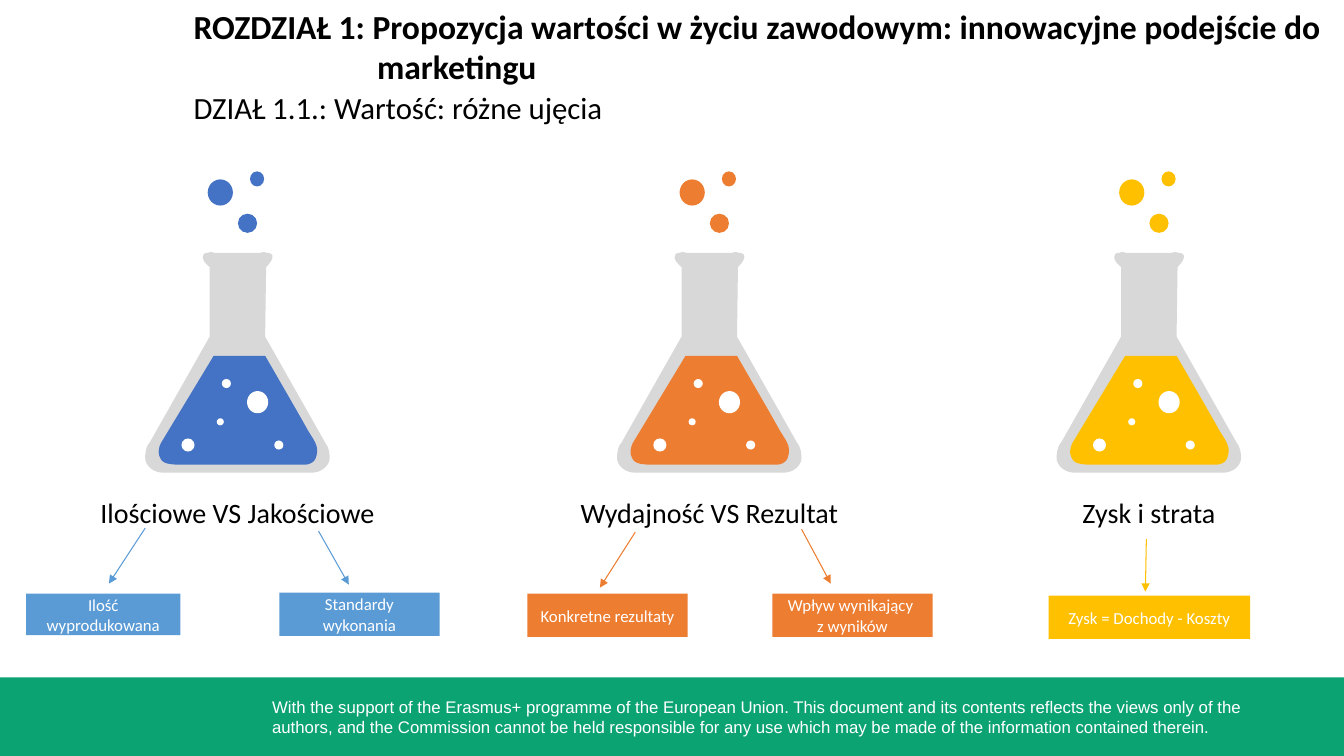
from pptx import Presentation
from pptx.dml.color import RGBColor
from pptx.enum.shapes import MSO_CONNECTOR as Connector, MSO_SHAPE as Shape
from pptx.enum.text import MSO_ANCHOR as Anchor, PP_ALIGN as Align
from pptx.oxml.ns import qn
from pptx.util import Cm, Pt
from lxml.etree import SubElement

COLORS = {
    "green": "0CA373", "glass": "D8D8D8", "white": "FFFFFF", "black": "000000",
    "blue": "4472C4", "sky": "5B9BD5", "orange": "ED7D31", "gold": "FFC000",
}

CHAPTER = [
    ("ROZDZIAŁ 1: Propozycja wartości w życiu zawodowym: innowacyjne podejście do", 0),
    ("marketingu", 1.82),
]
SECTION = "DZIAŁ 1.1.: Wartość: różne ujęcia"
SUPPORT = (
    "With the support of the Erasmus+ programme of the European Union. "
    "This document and its contents reflects the views only of the authors, "
    "and the Commission cannot be held responsible for any use which may be "
    "made of the information contained therein."
)

FLASKS = [
    {"left": 1.44, "liquid": "blue", "accent": "sky", "label": "Ilościowe VS Jakościowe",
     "notes": [("Ilość wyprodukowana", (0.26, 5.89, 1.53, 0.41)),
               ("Standardy wykonania", (2.77, 5.88, 1.59, 0.43))],
     "arrows": [(1.44, 5.24, 1.08, 5.79), (3.16, 5.27, 3.46, 5.8)]},
    {"left": 6.12, "liquid": "orange", "accent": "orange", "label": "Wydajność VS Rezultat",
     "notes": [("Konkretne rezultaty", (5.23, 5.89, 1.59, 0.43)),
               ("Wpływ wynikający \nz wyników", (7.66, 5.89, 1.59, 0.43))],
     "arrows": [(6.3, 5.28, 5.95, 5.83), (7.95, 5.25, 8.24, 5.79)]},
    {"left": 10.48, "liquid": "gold", "accent": "gold", "label": "Zysk i strata",
     "notes": [("Zysk = Dochody - Koszty", (10.4, 5.91, 2, 0.43))],
     "arrows": [(11.37, 5.35, 11.36, 5.87)]},
]

GLASS = [
    [(1.65, 4.69)], [(0.18, 4.69)],
    [(0.08, 4.69), (0, 4.62), (0, 4.54)],
    [(0, 4.46), (0.03, 4.4), (0.04, 4.4)],
    [(0.64, 3.34)], [(0.64, 2.65)],
    [(0.58, 2.6), (0.56, 2.56), (0.58, 2.53)],
    [(0.58, 2.52), (0.59, 2.51), (0.62, 2.51)],
    [(0.64, 2.5), (0.66, 2.5), (0.69, 2.51)],
    [(1.14, 2.51)],
    [(1.16, 2.5), (1.19, 2.5), (1.21, 2.51)],
    [(1.24, 2.51), (1.25, 2.52), (1.26, 2.53)],
    [(1.27, 2.56), (1.25, 2.6), (1.2, 2.65)],
    [(1.19, 3.34)], [(1.79, 4.4)],
    [(1.8, 4.41), (1.83, 4.46), (1.83, 4.54)],
    [(1.83, 4.62), (1.75, 4.69), (1.65, 4.69)],
]
LIQUID = [
    [(0.68, 3.53)], [(0.16, 4.39)],
    [(0.16, 4.39), (0.12, 4.46), (0.14, 4.52)],
    [(0.16, 4.57), (0.17, 4.61), (0.34, 4.61)],
    [(1.57, 4.61)],
    [(1.57, 4.61), (1.68, 4.62), (1.7, 4.52)],
    [(1.72, 4.43), (1.69, 4.39), (1.62, 4.28)],
    [(1.56, 4.17), (1.19, 3.53), (1.19, 3.53)],
]
WHITE_BUBBLES = [
    (0.76, 3.76, 0.09, 0.09), (1.28, 4.37, 0.09, 0.09), (0.36, 4.35, 0.13, 0.13),
    (0.71, 4.15, 0.07, 0.07), (1.01, 3.88, 0.21, 0.22),
]
RISING_BUBBLES = [
    (0.92, 2.12, 0.19, 0.19), (0.62, 1.78, 0.25, 0.26), (1.04, 1.7, 0.14, 0.15),
]
CURVE_STEPS = 10


def inches(value):
    return Cm(value * 2.54)


def color(name):
    return RGBColor.from_string(COLORS[name])


def paint(shape, fill):
    shape.shadow.inherit = False
    shape.fill.solid()
    shape.fill.fore_color.rgb = color(fill)
    shape.line.fill.background()


def add_preset(shapes, kind, place, fill):
    shape = shapes.add_shape(kind, *map(inches, place))
    paint(shape, fill)
    return shape


def trace(segments):
    points = []
    for segment in segments:
        if len(segment) == 1:
            points += segment
            continue
        corners = [points[-1], *segment]
        for step in range(1, CURVE_STEPS + 1):
            t = step / CURVE_STEPS
            weights = ((1 - t) ** 3, 3 * t * (1 - t) ** 2, 3 * t * t * (1 - t), t ** 3)
            points.append(tuple(sum(w * c[axis] for w, c in zip(weights, corners))
                                for axis in (0, 1)))
    return points


def add_outline(shapes, segments, left, fill):
    points = [(inches(left + x), inches(y)) for x, y in trace(segments)]
    builder = shapes.build_freeform(*points[0], scale=1.0)
    builder.add_line_segments(points[1:], close=True)
    paint(builder.convert_to_shape(), fill)


def write(para, text, size, ink, font="Calibri", bold=False, align=Align.LEFT):
    para.alignment = align
    for number, line in enumerate(text.split("\n")):
        if number:
            para.add_line_break()
        span = para.add_run()
        span.text = line
        span.font.name = font
        span.font.size = Pt(size)
        span.font.bold = bold
        span.font.color.rgb = color(ink)


def set_frame(shape, margins=(0.1, 0.05, 0.1, 0.05), anchor=Anchor.TOP):
    frame = shape.text_frame
    frame.word_wrap = True
    frame.vertical_anchor = anchor
    frame.margin_left, frame.margin_top, frame.margin_right, frame.margin_bottom = map(inches, margins)
    return frame


def add_text(page, place, *margins):
    return set_frame(page.shapes.add_textbox(*map(inches, place)), *margins)


def add_flask(page, flask):
    left, liquid = flask["left"], flask["liquid"]
    shapes = page.shapes.add_group_shape().shapes
    add_outline(shapes, GLASS, left, "glass")
    add_outline(shapes, LIQUID, left, liquid)
    for bubbles, fill in ((WHITE_BUBBLES, "white"), (RISING_BUBBLES, liquid)):
        for x, *rest in bubbles:
            add_preset(shapes, Shape.OVAL, (left + x, *rest), fill)


def add_arrow(page, ends, ink):
    arrow = page.shapes.add_connector(Connector.STRAIGHT, *map(inches, ends))
    arrow.line.color.rgb = color(ink)
    arrow.line.width = Pt(0.75)
    SubElement(arrow.line._get_or_add_ln(), qn("a:tailEnd"), type="triangle")
    SubElement(arrow._element.spPr, qn("a:effectLst"))


def main():
    deck = Presentation()
    deck.slide_width, deck.slide_height = inches(13.33), inches(7.5)
    page = deck.slides.add_slide(deck.slide_layouts[6])

    add_preset(page.shapes, Shape.RECTANGLE, (0, 6.72, 13.33, 0.78), "green")
    support = add_text(page, (2.6, 6.86, 10.42, 0.5))
    write(support.paragraphs[0], SUPPORT, 12, "white", font="Arial")

    section = add_text(page, (1.92, 0.86, 6.68, 0.39), (0, 0.02, 0, 0))
    write(section.paragraphs[0], SECTION, 22, "black")
    chapter = add_text(page, (1.92, 0.05, 12.3, 0.82), (0, 0.01, 0, 0))
    for number, (line, indent) in enumerate(CHAPTER):
        para = chapter.add_paragraph() if number else chapter.paragraphs[0]
        para._p.get_or_add_pPr().set("marL", str(inches(indent)))
        write(para, line, 24, "black", bold=True)

    for flask in FLASKS:
        add_flask(page, flask)
        label = add_text(page, (flask["left"] - 0.76, 4.87, 3.35, 0.44))
        write(label.paragraphs[0], flask["label"], 20, "black", align=Align.CENTER)
        for text, place in flask["notes"]:
            box = add_preset(page.shapes, Shape.RECTANGLE, place, flask["accent"])
            frame = set_frame(box, anchor=Anchor.MIDDLE)
            write(frame.paragraphs[0], text, 12, "white", align=Align.CENTER)
        for ends in flask["arrows"]:
            add_arrow(page, ends, flask["accent"])

    deck.save("out.pptx")


if __name__ == "__main__":
    main()
